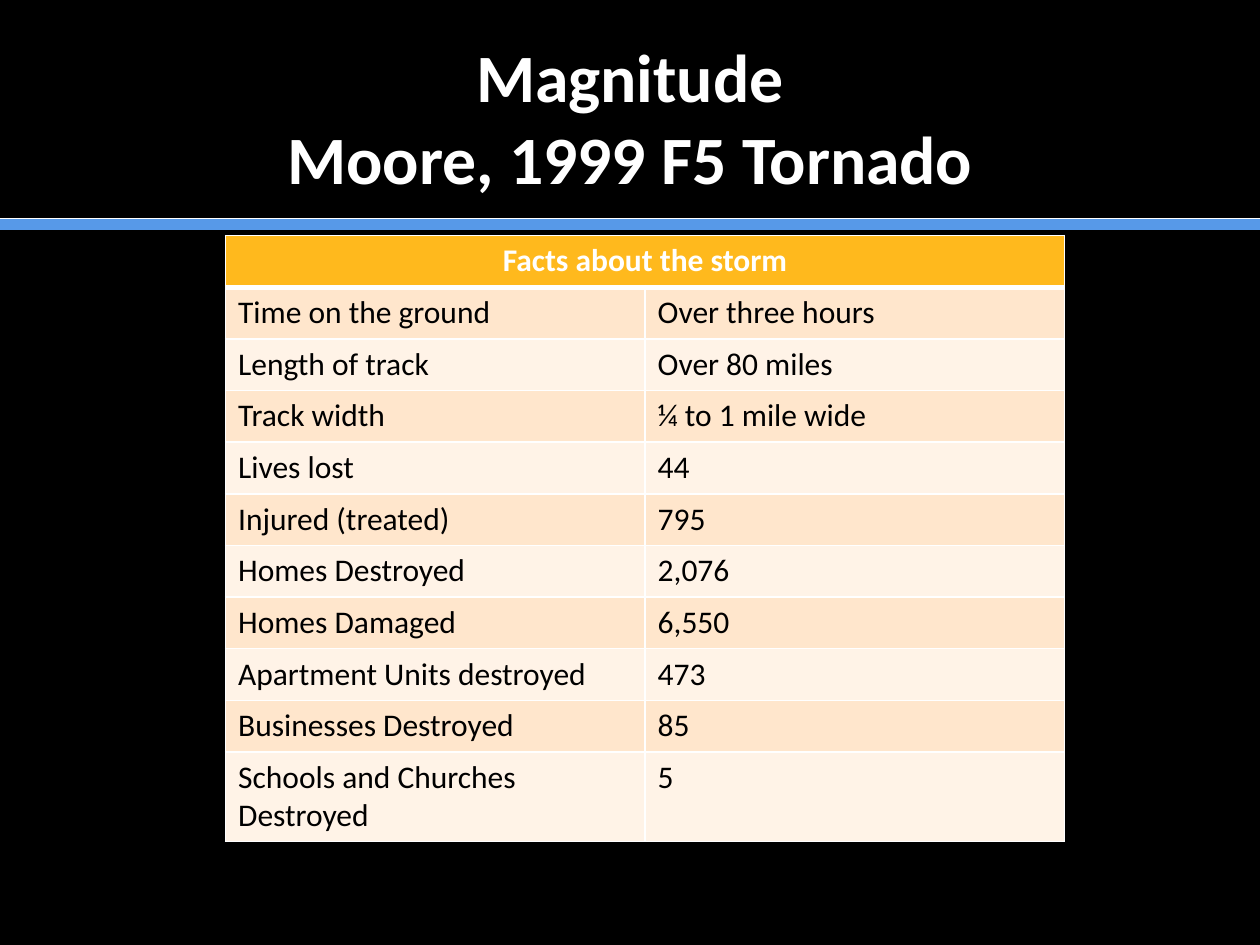
from copy import deepcopy

from lxml.etree import SubElement
from pptx import Presentation
from pptx.dml.color import RGBColor
from pptx.enum.shapes import MSO_CONNECTOR
from pptx.enum.text import MSO_ANCHOR, MSO_AUTO_SIZE, PP_ALIGN
from pptx.oxml.ns import qn
from pptx.util import Inches, Pt

COLORS = {
    "background": "000000",
    "rule": "5799E8",
    "white": "FFFFFF",
    "text": "000000",
    "header": "FFB91D",
    "band_dark": "FFE6CC",
    "band_light": "FFF3E7",
}
FACTS = [
    ("Time on the ground", "Over three hours"),
    ("Length of track", "Over 80 miles"),
    ("Track width", "¼ to 1 mile wide"),
    ("Lives lost", "44"),
    ("Injured (treated)", "795"),
    ("Homes Destroyed", "2,076"),
    ("Homes Damaged", "6,550"),
    ("Apartment Units destroyed", "473"),
    ("Businesses Destroyed", "85"),
    ("Schools and Churches Destroyed", "5"),
]


def format_run(run, color, **values):
    for name, value in {"name": "Calibri", **values}.items():
        setattr(run.font, name, value)
    run.font.color.rgb = RGBColor.from_string(COLORS[color])


def format_cell(cell, text, fill, color, bold, widths):
    properties = cell._tc.get_or_add_tcPr()
    for side, width in zip(("lnL", "lnR", "lnT", "lnB"), widths):
        line = SubElement(properties, qn(f"a:{side}"), w=str(Pt(width)))
        solid = SubElement(line, qn("a:solidFill"))
        SubElement(solid, qn("a:srgbClr"), val=COLORS["white"])
    cell.fill.solid()
    cell.fill.fore_color.rgb = RGBColor.from_string(COLORS[fill])
    if text:
        run = cell.text_frame.paragraphs[0].add_run()
        run.text = text
        format_run(run, color, size=Pt(18), bold=bold)


presentation = Presentation()
presentation.slide_width = Inches(10)
presentation.slide_height = Inches(7.5)
slide = presentation.slides.add_slide(presentation.slide_layouts[5])
slide.background.fill.solid()
slide.background.fill.fore_color.rgb = RGBColor.from_string(COLORS["background"])

# Double rule under the title
for top, color, width in ((1.78, "rule", 7), (1.73, "white", 0.5)):
    rule = slide.shapes.add_connector(
        MSO_CONNECTOR.STRAIGHT, 0, Inches(top), Inches(10), Inches(top))
    rule.line.color.rgb = RGBColor.from_string(COLORS[color])
    rule.line.width = Pt(width)
    SubElement(rule._element.spPr, qn("a:effectLst"))

# Title
title = slide.shapes.title
title.left, title.top = Inches(0.5), Inches(0.3)
title.width, title.height = Inches(9), Inches(1.25)
title.text_frame.text = "Magnitude\vMoore, 1999 F5 Tornado"
title.text_frame.vertical_anchor = MSO_ANCHOR.MIDDLE
title.text_frame.auto_size = MSO_AUTO_SIZE.NONE
heading = title.text_frame.paragraphs[0]
heading.alignment = PP_ALIGN.CENTER
for run in heading.runs:
    format_run(run, "white", size=Pt(38.7), bold=True)
# The line break takes the run format so both lines have the same height
heading._p.find(qn("a:br")).append(deepcopy(heading.runs[0]._r.rPr))

# Table of facts: merged header, then banded rows
row_heights = [0.41] * len(FACTS) + [0.7]
table = slide.shapes.add_table(
    len(row_heights), 2, Inches(1.79), Inches(1.87),
    Inches(6.67), Inches(sum(row_heights))).table
for column in table.columns:
    column.width = Inches(3.33)
for row, height in zip(table.rows, row_heights):
    row.height = Inches(height)

table.cell(0, 0).merge(table.cell(0, 1))
for column, text in enumerate(("Facts about the storm", "")):
    format_cell(table.cell(0, column), text, "header", "white", True, (1, 1, 1, 3))
table.cell(0, 0).text_frame.paragraphs[0].alignment = PP_ALIGN.CENTER

for row, fact in enumerate(FACTS, start=1):
    band = "band_dark" if row % 2 else "band_light"
    top_width = 3 if row == 1 else 1
    for column, text in enumerate(fact):
        format_cell(table.cell(row, column), text, band, "text", False,
                    (1, 1, top_width, 1))

presentation.save("out.pptx")
